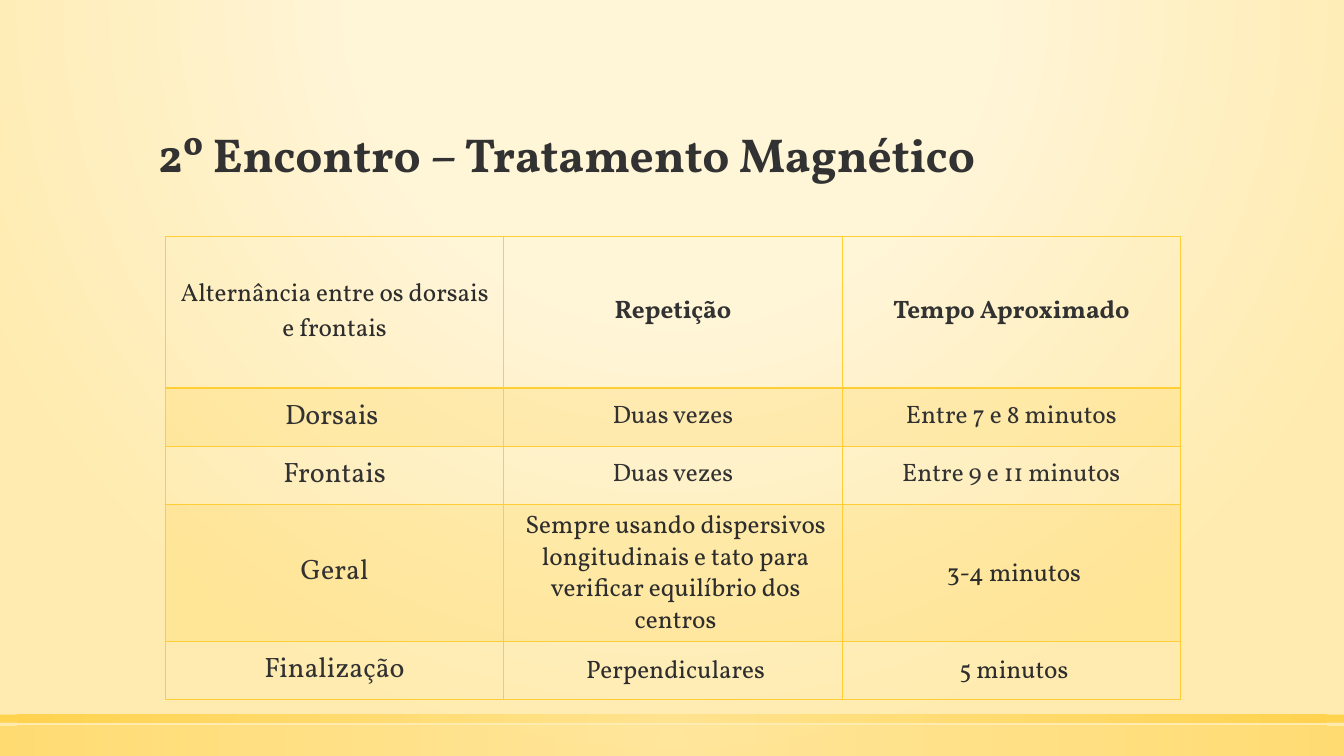
from lxml import etree
from pptx import Presentation
from pptx.dml.color import RGBColor as RGB
from pptx.enum.shapes import MSO_SHAPE as Shape
from pptx.enum.text import MSO_ANCHOR as Anchor, MSO_AUTO_SIZE as Auto, PP_ALIGN as Align
from pptx.oxml import parse_xml
from pptx.oxml.ns import nsdecls, qn
from pptx.util import Cm, Pt

FONT = "Vollkorn"
HUES = {"title": "323232", "text": "2D2D2D", "gold": "FFCD36",
        "light": "FFE186", "cream": "FFF5D7", "sand": "FFEBAF"}
HEAD = ["Alternância entre os dorsais e frontais", "Repetição", "Tempo Aproximado"]
ROWS = [
    ["Dorsais ", "Duas vezes", "Entre 7 e 8 minutos"],
    ["Frontais", "Duas vezes", "Entre 9 e 11 minutos"],
    ["Geral", "Sempre usando dispersivos longitudinais e tato para "
     "verificar equilíbrio dos centros", "3-4 minutos"],
    ["Finalização", "Perpendiculares", "5 minutos"],
]
TALL = [3.82, 1.47, 1.46, 3.45, 1.46]


def glow(owner, fill, stops, rect, alpha=100):
    fill.gradient()
    old = owner.element.find(".//" + qn("a:gradFill"))
    marks = "".join(
        f'<a:gs pos="{pos * 1000}"><a:srgbClr val="{HUES[hue]}">'
        f'<a:alpha val="{alpha * 1000}"/></a:srgbClr></a:gs>' for pos, hue in stops)
    sides = " ".join(f'{side}="{size * 1000}"' for side, size in zip("ltrb", rect))
    new = parse_xml(
        f'<a:gradFill {nsdecls("a")} rotWithShape="1"><a:gsLst>{marks}</a:gsLst>'
        f'<a:path path="circle"><a:fillToRect {sides}/></a:path></a:gradFill>')
    old.getparent().replace(old, new)


def add_bars(slide, left, top, width):
    for drop, height, alpha in [(0.28, 0.76, 50), (0, 0.2, 80)]:
        bar = slide.shapes.add_shape(
            Shape.RECTANGLE, left, top + Cm(drop), width, Cm(height))
        bar.shadow.inherit = False
        bar.line.fill.background()
        glow(bar, bar.fill, [(0, "light"), (100, "gold")], (50, 50, 50, 50), alpha)


def style(par, size, hue, bold=False, align=Align.CENTER):
    par.alignment = align
    par.font.name = FONT
    par.font.size = Pt(size)
    par.font.bold = bold
    par.font.color.rgb = RGB.from_string(HUES[hue])


def add_title(slide, left, top, width, height):
    title = slide.shapes.title
    title.left, title.top, title.width, title.height = left, top, width, height
    frame = title.text_frame
    frame.text = "2º Encontro – Tratamento Magnético"
    frame.word_wrap = True
    frame.auto_size = Auto.NONE
    frame.vertical_anchor = Anchor.BOTTOM
    par = frame.paragraphs[0]
    par.line_spacing = 0.9
    style(par, 34, "title", True, Align.LEFT)


def paint(cell, row):
    props = cell._tc.get_or_add_tcPr()
    if row % 2:
        cell.fill.solid()
        cell.fill.fore_color.rgb = RGB.from_string(HUES["gold"])
        tint = props.find(".//" + qn("a:srgbClr"))
        etree.SubElement(tint, qn("a:alpha")).set("val", "20000")
    else:
        cell.fill.background()
    for spot, side in enumerate("LRTB"):
        thick = (row, side) in [(0, "B"), (1, "T")]
        line = parse_xml(
            f'<a:ln{side} {nsdecls("a")} w="{Pt(2 if thick else 1)}"><a:solidFill>'
            f'<a:srgbClr val="{HUES["gold"]}"/></a:solidFill></a:ln{side}>')
        props.insert(spot, line)


def write(cell, text, row, col):
    cell.text = text
    cell.vertical_anchor = Anchor.MIDDLE
    par = cell.text_frame.paragraphs[0]
    if row == 0:
        style(par, 18, "title" if col else "text", col > 0)
    else:
        style(par, 18 if col else 20, "text" if col and row > 2 else "title")
    if row > 2 and col:
        par.line_spacing = 0.9
        par.space_before = Pt(18)
        par._p.get_or_add_pPr().set("marL", str(Cm(0.13)))


def add_grid(slide, left, top, width):
    data = [HEAD] + ROWS
    table = slide.shapes.add_table(
        len(data), len(HEAD), left, top, width, Cm(sum(TALL))).table
    table.first_row = table.horz_banding = False
    for col in table.columns:
        col.width = width // len(HEAD)
    for row, texts in enumerate(data):
        table.rows[row].height = Cm(TALL[row])
        for col, text in enumerate(texts):
            cell = table.cell(row, col)
            write(cell, text, row, col)
            paint(cell, row)


def main():
    deck = Presentation()
    deck.slide_width, deck.slide_height = Cm(33.87), Cm(19.05)
    slide = deck.slides.add_slide(deck.slide_layouts[5])
    glow(slide, slide.background.fill,
         [(0, "cream"), (40, "cream"), (100, "sand")], (50, -80, 50, 180))
    add_bars(slide, 0, Cm(18.01), deck.slide_width)
    add_title(slide, Cm(3.73), Cm(1.3), Cm(26.42), Cm(3.43))
    add_grid(slide, Cm(4.17), Cm(5.96), Cm(25.58))
    deck.save("out.pptx")


if __name__ == "__main__":
    main()
